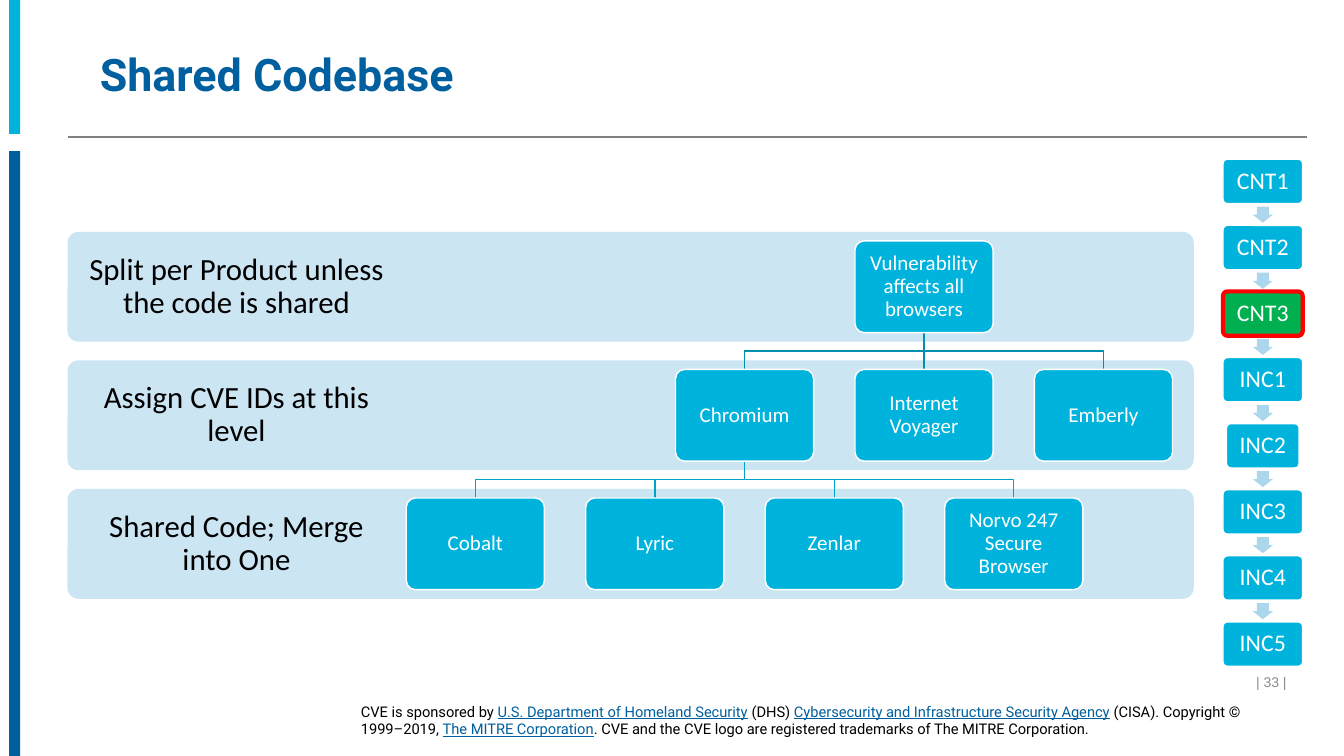
import pptx
import pptx.util
import pptx.dml.color
import pptx.enum.shapes
import pptx.enum.text
import pptx.oxml

Inches = pptx.util.Inches
Pt = pptx.util.Pt
SHAPE = pptx.enum.shapes.MSO_SHAPE
ALIGN = pptx.enum.text.PP_ALIGN
ANCHOR = pptx.enum.text.MSO_ANCHOR

CYAN, BLUE, PALE, WHITE, BLACK = "00B3DC", "005F9E", "CCE5F2", "FFFFFF", "000000"

LEVELS = ["Split per Product unless the code is shared",
          "Assign CVE IDs at this level",
          "Shared Code; Merge into One"]
# Per browser: text, level, column; columns are counted from the left
ROOT = ("Vulnerability affects all browsers", 0, 2.5)
ENGINES = [("Chromium", 1, 1.5), ("Internet Voyager", 1, 2.5), ("Emberly", 1, 3.5)]
DERIVED = [("Cobalt", 2, 0), ("Lyric", 2, 1), ("Zenlar", 2, 2),
           ("Norvo 247 Secure Browser", 2, 3)]
STEPS = ["CNT1", "CNT2", "CNT3", "INC1", "INC2", "INC3", "INC4", "INC5"]
CURRENT_STEP = "CNT3"
NARROW_STEP = "INC2"
SPONSOR = [("CVE is sponsored by ", False),
           ("U.S. Department of Homeland Security", True),
           (" (DHS) ", False),
           ("Cybersecurity and Infrastructure Security Agency", True),
           (" (CISA). Copyright © 1999–2019, ", False),
           ("The MITRE Corporation", True),
           (". CVE and the CVE logo are registered trademarks of The MITRE Corporation.", False)]


def color(hex_value):
    return pptx.dml.color.RGBColor.from_string(hex_value)


def set_all(target, values):
    for name, value in values.items():
        setattr(target, name, value)


def style_font(font, hex_value, **values):
    set_all(font, values)
    font.color.rgb = color(hex_value)


def style_frame(frame, inset, anchor):
    margins = ("margin_left", "margin_top", "margin_right", "margin_bottom")
    set_all(frame, dict.fromkeys(margins, Inches(inset)))
    set_all(frame, {"word_wrap": True, "vertical_anchor": anchor})


def add_box(slide, kind, box, fill, line=None, line_width=1):
    shape = slide.shapes.add_shape(kind, *map(Inches, box))
    shape.shadow.inherit = False
    shape.fill.solid()
    shape.fill.fore_color.rgb = color(fill)
    if line:
        shape.line.color.rgb = color(line)
        shape.line.width = Pt(line_width)
    else:
        shape.line.fill.background()
    if kind == SHAPE.ROUNDED_RECTANGLE:
        shape.adjustments[0] = 0.1
    return shape


def write_label(shape, text, size, hex_value, inset):
    frame = shape.text_frame
    style_frame(frame, inset, ANCHOR.MIDDLE)
    label = frame.paragraphs[0]
    label.text = text
    set_all(label, {"alignment": ALIGN.CENTER, "line_spacing": 0.9})
    style_font(label.font, hex_value, size=Pt(size), name="Calibri")


def add_rule(slide, start, end, hex_value):
    rule = slide.shapes.add_connector(pptx.enum.shapes.MSO_CONNECTOR.STRAIGHT,
                                      *map(Inches, start + end))
    rule.line.color.rgb = color(hex_value)
    rule.line.width = Pt(1)
    rule._element.spPr.append(pptx.oxml.parse_xml(
        '<a:effectLst xmlns:a="http://schemas.openxmlformats.org/drawingml/2006/main"/>'))


def add_branch(slide, start, end, hex_value):
    if start[0] == end[0]:
        add_rule(slide, start, end, hex_value)
        return
    middle = (start[1] + end[1]) / 2
    corners = [(start[0], middle), (end[0], middle), end]
    builder = slide.shapes.build_freeform(Inches(start[0]), Inches(start[1]))
    builder.add_line_segments([(Inches(x), Inches(y)) for x, y in corners], close=False)
    branch = builder.convert_to_shape()
    branch.shadow.inherit = False
    branch.fill.background()
    branch.line.color.rgb = color(hex_value)
    branch.line.width = Pt(1)


def draw_frame(slide, left, height):
    # Side bars and the rule under the title
    add_box(slide, SHAPE.RECTANGLE, (left, 0, 0.11, 1.33), CYAN)
    add_box(slide, SHAPE.RECTANGLE, (left, 1.5, 0.11, height - 1.5), BLUE)
    add_rule(slide, (0.67, 1.36), (12.96, 1.36), "808080")


def draw_title(slide, box):
    title = slide.shapes.title
    set_all(title, dict(zip(("left", "top", "width", "height"), map(Inches, box))))
    title.text_frame.text = "Shared Codebase"
    set_all(title.text_frame, {"word_wrap": True, "vertical_anchor": ANCHOR.MIDDLE})
    heading = title.text_frame.paragraphs[0]
    set_all(heading, {"alignment": ALIGN.LEFT, "line_spacing": Pt(32)})
    style_font(heading.font, BLUE, size=Pt(32), name="Roboto", bold=True)


def draw_browser_tree(slide, box):
    left, top, width, height = box
    band_height, node_width, node_height = 1.09, 1.37, 0.91
    band_pitch = (height - band_height) / (len(LEVELS) - 1)
    column_pitch = 1.78

    # Level bands with their captions
    for row, caption in enumerate(LEVELS):
        band_top = top + row * band_pitch
        add_box(slide, SHAPE.ROUNDED_RECTANGLE, (left, band_top, width, band_height), PALE)
        caption_box = slide.shapes.add_textbox(
            *map(Inches, (left, band_top, 3.35, band_height)))
        write_label(caption_box, caption, 22, BLACK, 0.17)

    def node_corner(node):
        _, row, column = node
        return left + 3.36 + column * column_pitch, top + 0.09 + row * band_pitch

    # Branches behind the nodes
    for parent, children, hex_value in ((ROOT, ENGINES, "008FB0"),
                                        (ENGINES[0], DERIVED, "00A2C8")):
        parent_left, parent_top = node_corner(parent)
        for child in children:
            child_left, child_top = node_corner(child)
            add_branch(slide, (parent_left + node_width / 2, parent_top + node_height),
                       (child_left + node_width / 2, child_top), hex_value)

    # Browser nodes
    for node in [ROOT] + ENGINES + DERIVED:
        shape = add_box(slide, SHAPE.ROUNDED_RECTANGLE,
                        (*node_corner(node), node_width, node_height), CYAN, WHITE)
        write_label(shape, node[0], 15, WHITE, 0.06)


def draw_step_chain(slide, box):
    left, top, width, height = box
    step_height = 0.44
    pitch = (height - step_height) / (len(STEPS) - 1)
    center = left + width / 2
    for index, step in enumerate(STEPS):
        step_top = top + index * pitch
        step_width = 0.72 if step == NARROW_STEP else width
        fill, line, line_width = (("00B050", "FF0000", 3) if step == CURRENT_STEP
                                  else (CYAN, WHITE, 1))
        shape = add_box(slide, SHAPE.ROUNDED_RECTANGLE,
                        (center - step_width / 2, step_top, step_width, step_height),
                        fill, line, line_width)
        write_label(shape, step, 17, WHITE, 0.07)
        if index < len(STEPS) - 1:
            arrow = add_box(slide, SHAPE.DOWN_ARROW,
                            (center - 0.1, step_top + 0.47, 0.2, 0.16), "ABD6EB")
            arrow.adjustments[0] = 0.6
            arrow.adjustments[1] = 0.5


def draw_page_number(slide, box):
    frame = slide.shapes.add_textbox(*map(Inches, box)).text_frame
    style_frame(frame, 0.05, ANCHOR.BOTTOM)
    frame.margin_right = Inches(0.13)
    number = frame.paragraphs[0]
    number.text = "| 33 |"
    number.alignment = ALIGN.RIGHT
    style_font(number.font, "8C8C8C", size=Pt(10), name="Arial")


def draw_sponsor_line(slide, box):
    frame = slide.shapes.add_textbox(*map(Inches, box)).text_frame
    style_frame(frame, 0.05, ANCHOR.TOP)
    for text, underlined in SPONSOR:
        run = frame.paragraphs[0].add_run()
        run.text = text
        style_font(run.font, BLUE if underlined else BLACK, size=Pt(10.5),
                   name="Roboto", underline=underlined)


def main():
    deck = pptx.Presentation()
    set_all(deck, {"slide_width": Inches(13.33), "slide_height": Inches(7.5)})
    slide = deck.slides.add_slide(deck.slide_layouts[5])
    draw_frame(slide, 0.09, 7.5)
    draw_title(slide, (0.89, 0.3, 10.2, 0.95))
    draw_browser_tree(slide, (0.67, 2.3, 11.17, 3.64))
    draw_step_chain(slide, (12.13, 1.58, 0.79, 5.03))
    draw_page_number(slide, (12.17, 6.7, 0.72, 0.2))
    draw_sponsor_line(slide, (3.53, 6.92, 9.16, 0.45))
    deck.save("out.pptx")


if __name__ == "__main__":
    main()
